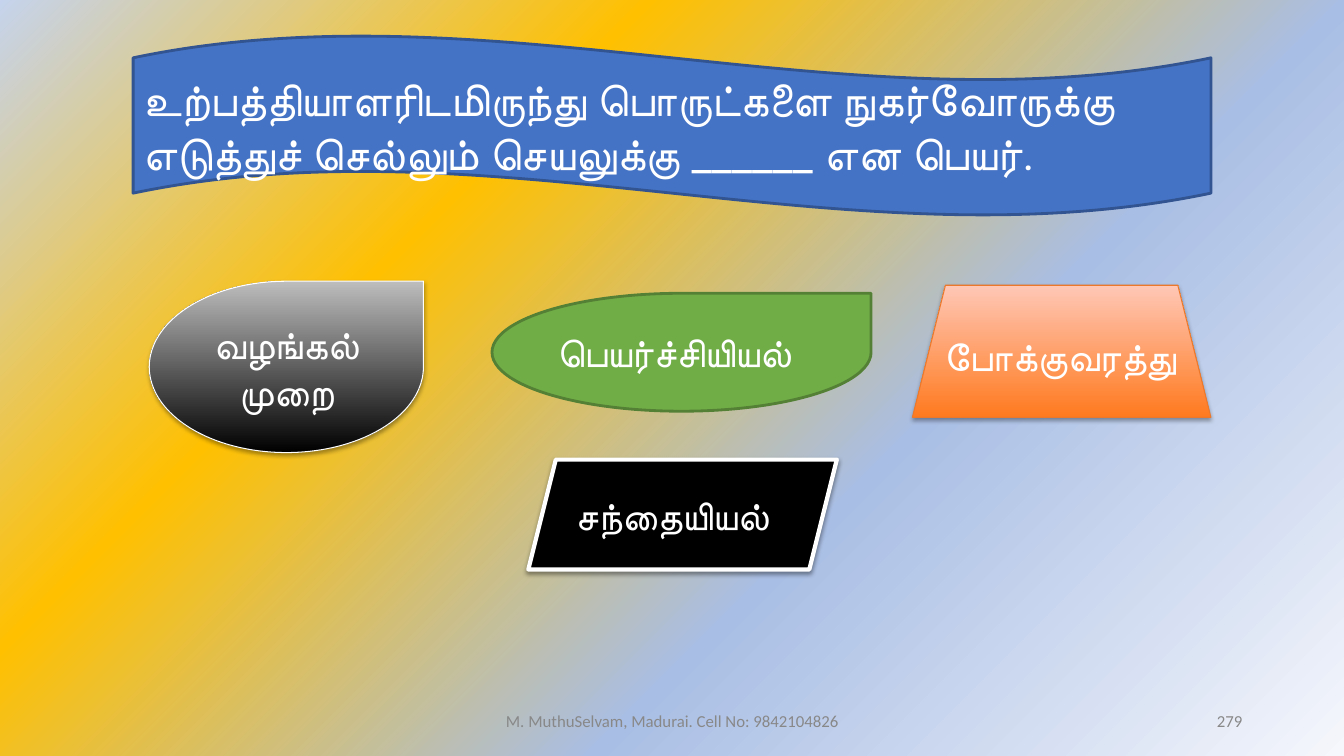
from dataclasses import dataclass

from pptx import Presentation
from pptx.dml.color import RGBColor
from pptx.enum.shapes import MSO_SHAPE
from pptx.enum.text import MSO_ANCHOR, PP_ALIGN
from pptx.oxml import parse_xml
from pptx.oxml.ns import nsdecls, qn
from pptx.util import Inches, Pt


@dataclass(frozen=True)
class Theme:
    body_font: str = "Roboto"
    footer_font: str = "Calibri"
    question_size: int = 32
    answer_size: int = 28
    footer_size: int = 12
    white: str = "FFFFFF"
    black: str = "000000"
    blue: str = "4472C4"
    dark_blue: str = "325491"
    green: str = "70AD47"
    dark_green: str = "538035"
    orange_line: str = "EC792B"
    footer_grey: str = "888888"
    grey_blend: tuple = ("000000", "BDBDBD")
    orange_blend: tuple = ("FF7A1F", "FFC7B6")
    backdrop: tuple = ((0, "F5F7FC"), (36, "A9BEE4"), (69, "FFC000"), (100, "C5D3ED"))


class QuizSlide:
    def __init__(self, slide, theme):
        self.slide = slide
        self.theme = theme

    def background(self):
        """Radial blend spreading from the bottom right corner."""
        self.slide.background.fill.gradient()
        blend = self.slide.element.find(".//" + qn("a:gradFill"))
        stops = "".join(
            f'<a:gs pos="{percent * 1000}"><a:srgbClr val="{color}"/></a:gs>'
            for percent, color in self.theme.backdrop
        )
        radial = parse_xml(
            f'<a:gradFill {nsdecls("a")} rotWithShape="1"><a:gsLst>{stops}</a:gsLst>'
            '<a:path path="circle"><a:fillToRect l="100000" t="100000"/></a:path>'
            "</a:gradFill>"
        )
        blend.getparent().replace(blend, radial)

    def add_text(self, frame, text, size, font, color, align):
        frame.word_wrap = True
        frame.vertical_anchor = MSO_ANCHOR.MIDDLE
        paragraph = frame.paragraphs[0]
        paragraph.alignment = align
        run = paragraph.add_run()
        run.text = text
        run.font.size = Pt(size)
        run.font.name = font
        run.font.color.rgb = RGBColor.from_string(color)

    def paint(self, fill, paint):
        """A single colour fills solid; a pair blends from bottom to top."""
        if isinstance(paint, str):
            fill.solid()
            fill.fore_color.rgb = RGBColor.from_string(paint)
            return
        fill.gradient()
        fill.gradient_angle = 90
        for stop, color in zip(fill.gradient_stops, paint):
            stop.color.rgb = RGBColor.from_string(color)

    def cast_shadow(self, shape, opacity, distance):
        effects = shape.element.spPr.find(qn("a:effectLst"))
        effects.append(parse_xml(
            f'<a:outerShdw {nsdecls("a")} blurRad="{Pt(3.15)}" dist="{Pt(distance)}" '
            'dir="5400000" rotWithShape="0">'
            f'<a:srgbClr val="{self.theme.black}"><a:alpha val="{opacity * 1000}"/>'
            "</a:srgbClr></a:outerShdw>"
        ))

    def panel(self, kind, box, text, size, paint, outline, width,
              align=PP_ALIGN.LEFT, shadow=None):
        panel = self.slide.shapes.add_shape(kind, *map(Inches, box))
        panel.shadow.inherit = False
        self.paint(panel.fill, paint)
        panel.line.color.rgb = RGBColor.from_string(outline)
        panel.line.width = Pt(width)
        if shadow:
            self.cast_shadow(panel, *shadow)
        self.add_text(panel.text_frame, text, size, self.theme.body_font,
                      self.theme.white, align)

    def footer(self, box, text, align):
        footer = self.slide.shapes.add_textbox(*map(Inches, box))
        self.add_text(footer.text_frame, text, self.theme.footer_size,
                      self.theme.footer_font, self.theme.footer_grey, align)


def main():
    presentation = Presentation()
    presentation.slide_width = Inches(13.33)
    presentation.slide_height = Inches(7.5)
    theme = Theme()
    quiz = QuizSlide(presentation.slides.add_slide(presentation.slide_layouts[6]), theme)
    quiz.background()

    # Question banner
    quiz.panel(
        MSO_SHAPE.WAVE, (1.32, 0.35, 10.69, 1.79),
        "உற்பத்தியாளரிடமிருந்து பொருட்களை நுகர்வோருக்கு "
        "எடுத்துச் செல்லும் செயலுக்கு ______ என பெயர்.",
        theme.question_size, theme.blue, theme.dark_blue, 2,
    )

    # Answer choices
    size = theme.answer_size
    soft_shadow = (35, 1.8)
    quiz.panel(MSO_SHAPE.TEAR, (1.48, 2.79, 2.72, 1.7), "வழங்கல் முறை", size,
               theme.grey_blend, theme.white, 0.75, PP_ALIGN.CENTER, soft_shadow)
    quiz.panel(MSO_SHAPE.TRAPEZOID, (9.05, 2.83, 2.96, 1.31), "போக்குவரத்து", size,
               theme.orange_blend, theme.orange_line, 0.75, shadow=soft_shadow)
    quiz.panel(MSO_SHAPE.PARALLELOGRAM, (5.24, 4.56, 3.06, 1.09), "சந்தையியல்", size,
               theme.black, theme.white, 3, shadow=(38, 1.6))
    quiz.panel(MSO_SHAPE.TEAR, (4.88, 2.91, 3.76, 1.17), "பெயர்ச்சியியல்", size,
               theme.green, theme.dark_green, 2)

    # Footer and page number
    quiz.footer((4.42, 6.95, 4.5, 0.4), "M. MuthuSelvam, Madurai. Cell No: 9842104826",
                PP_ALIGN.CENTER)
    quiz.footer((9.42, 6.95, 3, 0.4), "279", PP_ALIGN.RIGHT)

    presentation.save("out.pptx")


if __name__ == "__main__":
    main()
